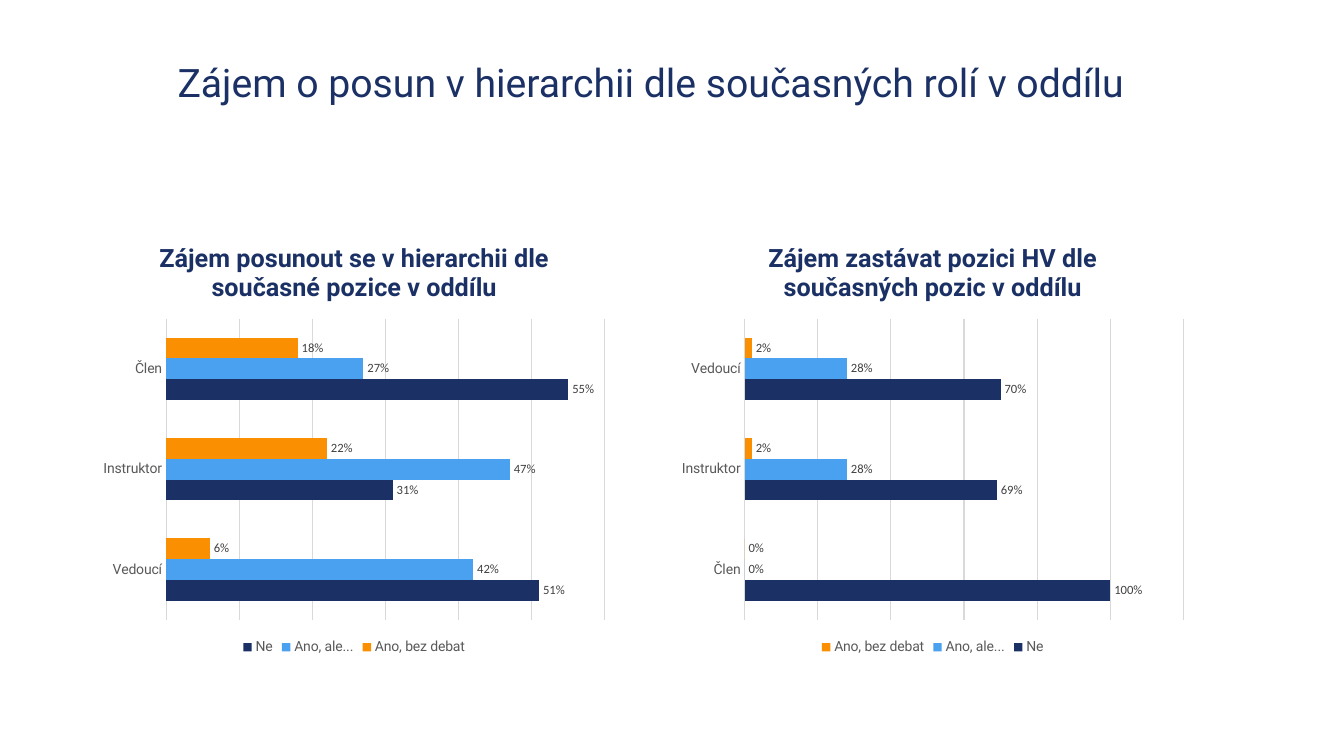
from dataclasses import dataclass

from lxml.etree import SubElement
from pptx import Presentation
from pptx.chart.data import CategoryChartData
from pptx.dml.color import RGBColor
from pptx.enum.chart import (XL_CHART_TYPE, XL_LABEL_POSITION,
                             XL_LEGEND_POSITION, XL_TICK_LABEL_POSITION,
                             XL_TICK_MARK)
from pptx.enum.text import MSO_ANCHOR, MSO_AUTO_SIZE, PP_ALIGN
from pptx.oxml.ns import qn
from pptx.util import Cm, Pt


@dataclass(frozen=True)
class Theme:
    navy: str = "1B3165"
    blue: str = "4AA1EF"
    gold: str = "FA8F01"
    grid: str = "D9D9D9"
    grey: str = "595959"
    dark: str = "404040"
    black: str = "000000"
    head: str = "Roboto"
    body: str = "Calibri"
    title: int = 28
    chart: int = 18
    axis: int = 10
    label: int = 9


THEME = Theme()
PERCENT = "###0%"
ROLES = ("Člen", "Instruktor", "Vedoucí")
COLORS = {"Ne": THEME.navy, "Ano, ale...": THEME.blue,
          "Ano, bez debat": THEME.gold}


def style(font, size, color, name, bold=False):
    font.size, font.name, font.bold = Pt(size), name, bold
    font.color.rgb = RGBColor.from_string(color)


def rule(line):
    line.color.rgb = RGBColor.from_string(THEME.grid)
    line.width = Pt(0.75)


def add_title(slide, box, text):
    title = slide.shapes.title
    title.left, title.top, title.width, title.height = box
    frame = title.text_frame
    frame.text = text
    frame.word_wrap = True
    frame.auto_size = MSO_AUTO_SIZE.NONE
    frame.vertical_anchor = MSO_ANCHOR.MIDDLE
    line = frame.paragraphs[0]
    line.alignment = PP_ALIGN.LEFT
    line.line_spacing = 0.9
    style(line.runs[0].font, THEME.title, THEME.navy, THEME.head)


def set_plot(chart, x, y, w, h):
    """Fix the inner plot area as fractions of the chart box."""
    area = chart._chartSpace.chart.plotArea
    for old in area.findall(qn("c:layout")):
        area.remove(old)
    layout = SubElement(area, qn("c:layout"))
    area.insert(0, layout)
    manual = SubElement(layout, qn("c:manualLayout"))
    parts = {"layoutTarget": "inner", "xMode": "edge", "yMode": "edge",
             "x": x, "y": y, "w": w, "h": h}
    for tag, val in parts.items():
        SubElement(manual, qn(f"c:{tag}")).set("val", str(val))


def add_bars(slide, box, text, series, top, step, flip=False):
    data = CategoryChartData(number_format=PERCENT)
    data.categories = ROLES
    for name, vals in series.items():
        data.add_series(name, vals)
    chart = slide.shapes.add_chart(
        XL_CHART_TYPE.BAR_CLUSTERED, *box, data).chart
    style(chart.font, THEME.axis, THEME.black, THEME.body)
    set_plot(chart, 0.14, 0.22, 0.84, 0.69)

    # Heading
    chart.has_title = True
    frame = chart.chart_title.text_frame
    frame.text = text
    style(frame.paragraphs[0].runs[0].font,
          THEME.chart, THEME.navy, THEME.head, True)
    chart.chart_title.include_in_layout = False

    # Legend
    chart.has_legend = True
    chart.legend.position = XL_LEGEND_POSITION.BOTTOM
    chart.legend.include_in_layout = False
    style(chart.legend.font, THEME.axis, THEME.grey, THEME.head)

    # Axes
    roles = chart.category_axis
    roles.reverse_order = flip
    roles.major_tick_mark = XL_TICK_MARK.NONE
    roles.tick_label_position = XL_TICK_LABEL_POSITION.NEXT_TO_AXIS
    style(roles.tick_labels.font, THEME.axis, THEME.grey, THEME.head)
    rule(roles.format.line)
    share = chart.value_axis
    share.visible = False
    share.minimum_scale, share.maximum_scale = 0, top
    share.major_unit = step
    share.has_major_gridlines = True
    rule(share.major_gridlines.format.line)

    # Bars
    plot = chart.plots[0]
    plot.gap_width, plot.overlap = 182, 0
    plot.vary_by_categories = False
    for bar in plot.series:
        bar.format.fill.solid()
        bar.format.fill.fore_color.rgb = RGBColor.from_string(COLORS[bar.name])
        tags = bar.data_labels
        tags.show_value = True
        tags.number_format = PERCENT
        tags.number_format_is_linked = False
        tags.position = XL_LABEL_POSITION.OUTSIDE_END
        style(tags.font, THEME.label, THEME.dark, THEME.body)


def main():
    deck = Presentation()
    deck.slide_width, deck.slide_height = Cm(33.87), Cm(19.05)
    slide = deck.slides.add_slide(deck.slide_layouts[5])
    add_title(slide, (Cm(4.22), Cm(1.27), Cm(25.45), Cm(1.75)),
              "Zájem o posun v hierarchii dle současných rolí v oddílu")

    # Two charts side by side
    top, wide, high = Cm(5.61), Cm(13.17), Cm(11)
    add_bars(slide, (Cm(16.92), top, wide, high),
             "Zájem zastávat pozici HV dle současných pozic v oddílu",
             {"Ne": (1, 0.69, 0.7),
              "Ano, ale...": (0, 0.28, 0.28),
              "Ano, bez debat": (0, 0.02, 0.02)}, 1.2, 0.2)
    add_bars(slide, (Cm(2.34), top, wide, high),
             "Zájem posunout se v hierarchii dle současné pozice v oddílu",
             {"Ano, bez debat": (0.18, 0.22, 0.06),
              "Ano, ale...": (0.27, 0.47, 0.42),
              "Ne": (0.55, 0.31, 0.51)}, 0.6, 0.1, flip=True)
    deck.save("out.pptx")


if __name__ == "__main__":
    main()
